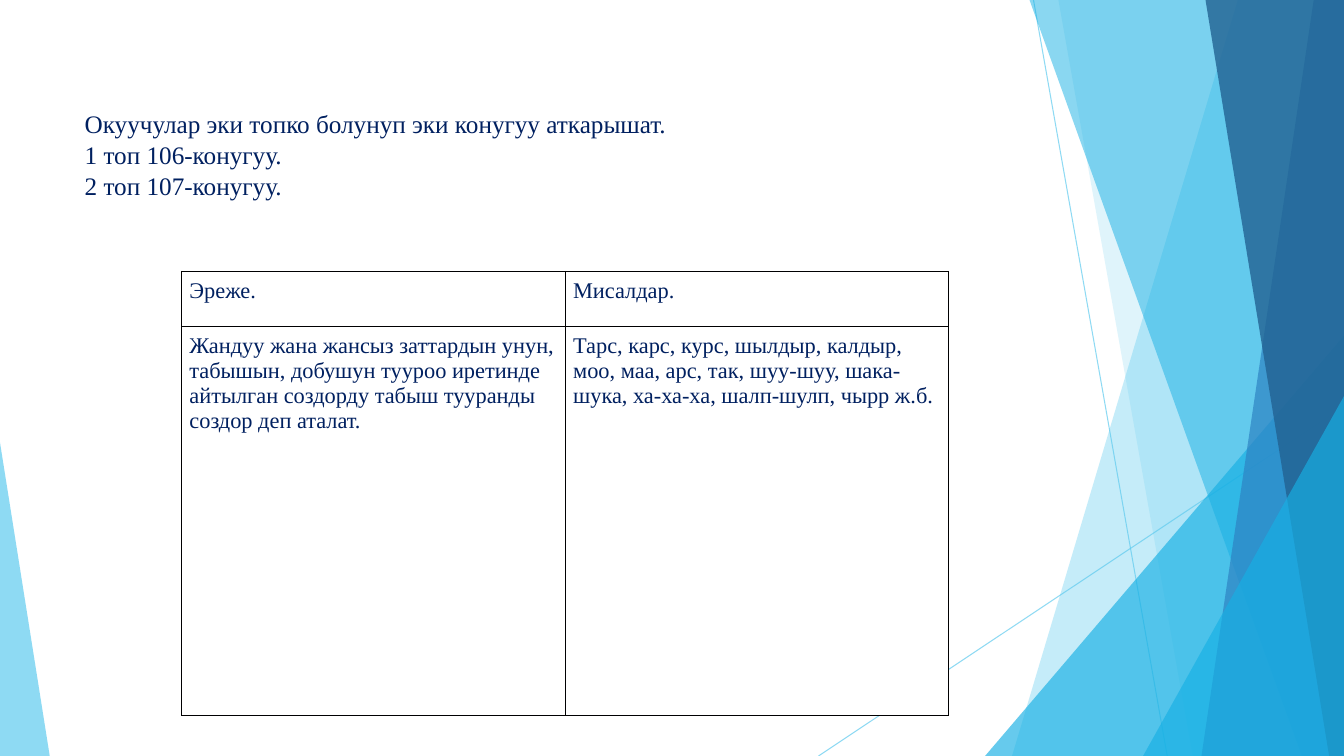
from dataclasses import dataclass

from lxml.etree import SubElement
from pptx import Presentation
from pptx.dml.color import RGBColor
from pptx.enum.shapes import MSO_CONNECTOR, MSO_SHAPE
from pptx.enum.text import MSO_ANCHOR, PP_ALIGN
from pptx.oxml.ns import qn
from pptx.util import Inches, Pt


@dataclass(frozen=True)
class Theme:
    font: str = "Times New Roman"
    title_size: int = 18
    table_size: int = 16
    hairline: float = 0.75
    text: str = "002060"
    paper: str = "FFFFFF"
    border: str = "000001"
    sky: str = "5FCBEF"
    azure: str = "17B0E4"
    blue: str = "2E83C3"
    navy: str = "226292"


@dataclass(frozen=True)
class Box:
    left: int
    top: int
    width: int
    height: int

    def point(self, x, y):
        """Point at x and y percent of the box."""
        return self.left + round(self.width * x / 100), self.top + round(self.height * y / 100)

    def inner(self, left, top, width, height):
        """Inner box measured in percent of this one."""
        return Box(*self.point(left, top),
                   round(self.width * width / 100), round(self.height * height / 100))

    def frame(self):
        return self.left, self.top, self.width, self.height


THEME = Theme()
TITLE_LINES = [
    "Окуучулар эки топко болунуп эки конугуу аткарышат.",
    "1 топ 106-конугуу.",
    "2 топ 107-конугуу.",
]
RULE_ROWS = [
    ("Эреже.", "Мисалдар."),
    ("Жандуу жана жансыз заттардын унун, табышын, добушун тууроо иретинде "
     "айтылган создорду табыш тууранды создор деп аталат.",
     "Тарс, карс, курс, шылдыр, калдыр, моо, маа, арс, так, шуу-шуу, "
     "шака-шука, ха-ха-ха, шалп-шулп, чырр ж.б."),
]
ROW_SHARES = (0.125, 0.875)

# Right-hand facets, back to front. A strip gives the x of its left edge at the
# top and bottom; a corner gives its left and top. All in percent of the slide.
FACETS = [
    ("strip", 92.1, 75.3, THEME.sky, 36),
    ("strip", 78.75, 88.75, THEME.sky, 20),
    ("corner", 73.3, 44.4, THEME.azure, 66),
    ("strip", 76.6, 96.85, THEME.azure, 50),
    ("strip", 97.75, 89.4, THEME.blue, 70),
    ("strip", 89.7, 98.9, THEME.navy, 80),
    ("corner", 85.05, 52.4, THEME.azure, 66),
]
RAYS = [((76.9, 0), (86.85, 100)), ((100, 53.75), (60.9, 100))]


def set_opacity(properties, percent):
    color = next(properties.iter(qn("a:srgbClr")))
    SubElement(color, qn("a:alpha"), val=str(percent * 1000))


def paint(shape, color, opacity):
    shape.shadow.inherit = False
    shape.line.fill.background()
    shape.fill.solid()
    shape.fill.fore_color.rgb = RGBColor.from_string(color)
    set_opacity(shape._element.spPr, opacity)


def add_ray(shapes, box, start, end):
    ray = shapes.add_connector(MSO_CONNECTOR.STRAIGHT, *box.point(*start), *box.point(*end))
    ray.line.width = Pt(THEME.hairline)
    ray.line.color.rgb = RGBColor.from_string(THEME.sky)
    properties = ray._element.spPr
    set_opacity(properties, 70)
    SubElement(properties, qn("a:effectLst"))


def add_strip(shapes, box, top_x, bottom_x):
    """Full-height facet that runs to the right edge of the box."""
    builder = shapes.build_freeform(*box.point(top_x, 0))
    builder.add_line_segments([box.point(100, 0), box.point(100, 100), box.point(bottom_x, 100)])
    return builder.convert_to_shape()


def add_corner(shapes, box, apex):
    """Right triangle whose top lies at the given share of its width."""
    triangle = shapes.add_shape(MSO_SHAPE.ISOSCELES_TRIANGLE, *box.frame())
    triangle.adjustments[0] = apex
    return triangle


def add_backdrop(shapes, box):
    for start, end in RAYS:
        add_ray(shapes, box, start, end)
    for kind, first, second, color, opacity in FACETS:
        if kind == "strip":
            facet = add_strip(shapes, box, first, second)
        else:
            facet = add_corner(shapes, box.inner(first, second, 100 - first, 100 - second), 1)
        paint(facet, color, opacity)
    paint(add_corner(shapes, box.inner(0, 58.55, 3.7, 41.45), 0), THEME.sky, 70)


def style_text(para, size):
    para.alignment = PP_ALIGN.LEFT
    para.font.name = THEME.font
    para.font.size = Pt(size)
    para.font.color.rgb = RGBColor.from_string(THEME.text)


def fill_title(title, box):
    title.left, title.top, title.width, title.height = box.frame()
    frame = title.text_frame
    frame.word_wrap = False
    frame.vertical_anchor = MSO_ANCHOR.BOTTOM
    frame.text = "\n".join(TITLE_LINES)
    for para in frame.paragraphs:
        style_text(para, THEME.title_size)
        para.line_spacing = 1.03


def add_borders(cell):
    properties = cell._tc.get_or_add_tcPr()
    for position, side in enumerate(("a:lnL", "a:lnR", "a:lnT", "a:lnB")):
        line = SubElement(properties, qn(side), w=str(Pt(THEME.hairline)))
        SubElement(SubElement(line, qn("a:solidFill")), qn("a:srgbClr"), val=THEME.border)
        properties.insert(position, line)


def add_rule_table(shapes, box):
    table = shapes.add_table(len(RULE_ROWS), len(RULE_ROWS[0]), *box.frame()).table
    for row, share, texts in zip(table.rows, ROW_SHARES, RULE_ROWS):
        row.height = round(box.height * share)
        for cell, text in zip(row.cells, texts):
            cell.margin_left = cell.margin_right = Inches(0.08)
            cell.margin_top = cell.margin_bottom = Inches(0.07)
            cell.fill.solid()
            cell.fill.fore_color.rgb = RGBColor.from_string(THEME.paper)
            cell.text = text
            style_text(cell.text_frame.paragraphs[0], THEME.table_size)
            add_borders(cell)


def add_exercise_slide(deck):
    page = deck.slides.add_slide(deck.slide_layouts[5])
    box = Box(0, 0, deck.slide_width, deck.slide_height)
    add_backdrop(page.shapes, box)
    fill_title(page.shapes.title, box.inner(5.55, 9.75, 45.2, 17.45))
    add_rule_table(page.shapes, box.inner(13.5, 35.9, 57.1, 58.75))


def main():
    deck = Presentation()
    deck.slide_width, deck.slide_height = Inches(40 / 3), Inches(7.5)
    add_exercise_slide(deck)
    deck.save("out.pptx")


if __name__ == "__main__":
    main()
